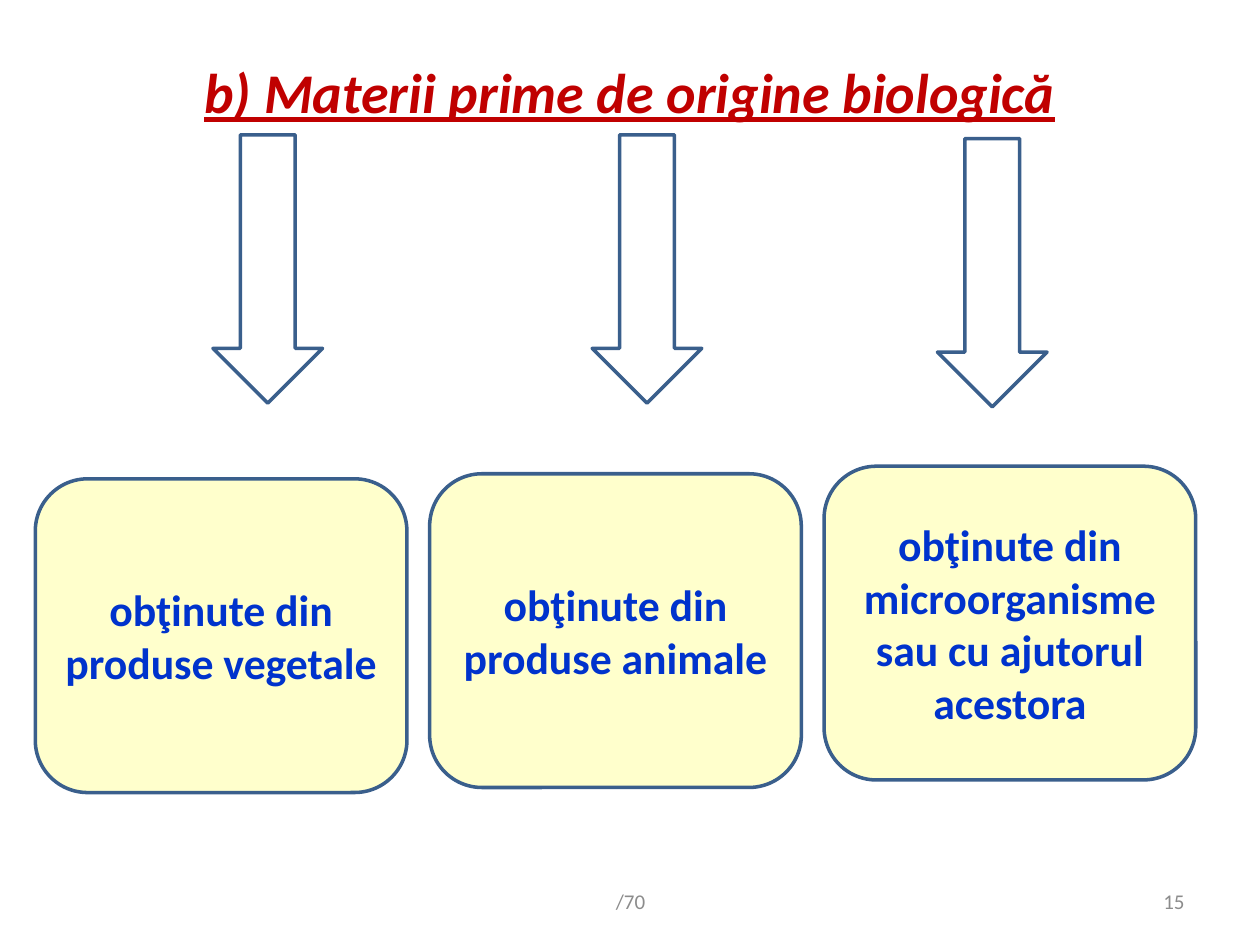
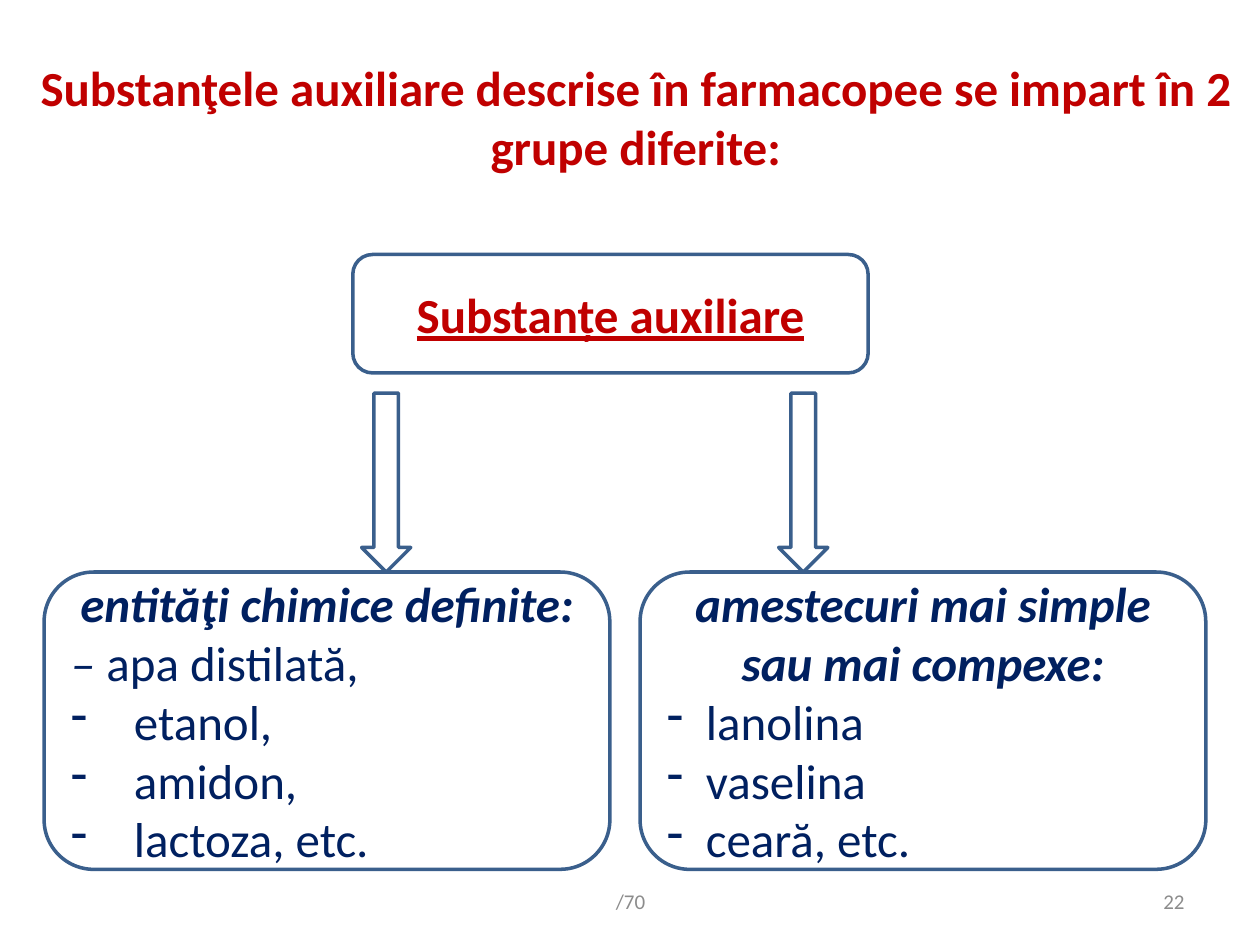
from dataclasses import dataclass, field

from lxml import etree
from pptx import Presentation
from pptx.dml.color import RGBColor
from pptx.enum.shapes import MSO_SHAPE
from pptx.enum.text import MSO_ANCHOR, MSO_AUTO_SIZE, PP_ALIGN
from pptx.oxml.ns import qn
from pptx.util import Inches, Pt

ROUND_RECT = MSO_SHAPE.ROUNDED_RECTANGLE
DOWN_ARROW = MSO_SHAPE.DOWN_ARROW
LEFT, CENTER, RIGHT = PP_ALIGN.LEFT, PP_ALIGN.CENTER, PP_ALIGN.RIGHT
MIDDLE = MSO_ANCHOR.MIDDLE
NO_AUTOFIT = MSO_AUTO_SIZE.NONE
TITLE_ONLY = 5


@dataclass(frozen=True)
class Theme:
    font: str = "Calibri"
    red: str = "C00000"
    blue: str = "0033CC"
    navy: str = "002060"
    grey: str = "8C8C8C"
    outline: str = "3A5F8C"
    white: str = "FFFFFF"
    cream: str = "FFFFCC"
    heading: int = 32
    large: int = 28
    label: int = 25
    small: int = 12
    line_width: int = 2


THEME = Theme()


@dataclass(frozen=True)
class Area:
    left: float
    top: float
    width: float
    height: float

    def lengths(self) -> tuple:
        return tuple(Inches(v) for v in (self.left, self.top, self.width, self.height))


@dataclass(frozen=True)
class Style:
    color: str
    size: int
    flags: dict = field(default_factory=dict)


@dataclass(frozen=True)
class Para:
    """A paragraph of (text, style) runs; a positive indent adds a dash bullet."""
    runs: tuple
    align: PP_ALIGN = CENTER
    indent: float = 0


@dataclass(frozen=True)
class Box:
    area: Area
    fill: str
    paras: tuple = ()
    shape: MSO_SHAPE = ROUND_RECT


TITLE = Style(THEME.red, THEME.large, {"bold": True})
HEADING = Style(THEME.red, THEME.heading, {"bold": True, "italic": True, "underline": True})
ROOT = Style(THEME.red, THEME.large, {"bold": True, "underline": True})
ORIGIN = Style(THEME.blue, THEME.label, {"bold": True})
GROUP = Style(THEME.navy, THEME.large, {"bold": True, "italic": True})
ITEM = Style(THEME.navy, THEME.large)
ITEM_DASH = Style(THEME.navy, THEME.large, {"italic": True})
FOOTER = Style(THEME.grey, THEME.small)

FOOTER_AREA = Area(3.42, 6.95, 3.17, 0.4)
NUMBER_AREA = Area(7.17, 6.95, 2.33, 0.4)


def line(text: str, style: Style, align: PP_ALIGN = CENTER) -> Para:
    return Para(((text, style),), align)


def dash_list(items: tuple, indent: float) -> tuple:
    return tuple(Para(((item, ITEM),), LEFT, indent) for item in items)


def add_dash(p, indent: float) -> None:
    pPr = p._p.get_or_add_pPr()
    pPr.set("marL", str(Inches(indent)))
    pPr.set("indent", str(-Inches(indent)))
    etree.SubElement(pPr, qn("a:buChar")).set("char", "-")


def write(tf, paras: tuple) -> None:
    for name, value in {"word_wrap": True, "auto_size": NO_AUTOFIT,
                        "vertical_anchor": MIDDLE}.items():
        setattr(tf, name, value)
    for i, para in enumerate(paras):
        p = tf.add_paragraph() if i else tf.paragraphs[0]
        p.alignment = para.align
        if para.indent:
            add_dash(p, para.indent)
        for text, style in para.runs:
            r = p.add_run()
            r.text = text
            font = {"name": THEME.font, "size": Pt(style.size),
                    "bold": False, "italic": False, **style.flags}
            for name, value in font.items():
                setattr(r.font, name, value)
            r.font.color.rgb = RGBColor.from_string(style.color)


def add_box(s, box: Box) -> None:
    sp = s.shapes.add_shape(box.shape, *box.area.lengths())
    sp.shadow.inherit = False
    sp.fill.solid()
    sp.fill.fore_color.rgb = RGBColor.from_string(box.fill)
    sp.line.color.rgb = RGBColor.from_string(THEME.outline)
    sp.line.width = Pt(THEME.line_width)
    write(sp.text_frame, box.paras)


def add_arrow(s, area: Area) -> None:
    add_box(s, Box(area, THEME.white, shape=DOWN_ARROW))


def add_text(s, area: Area, para: Para) -> None:
    write(s.shapes.add_textbox(*area.lengths()).text_frame, (para,))


def add_slide(prs, title: str, style: Style, area: Area, number: int):
    """Add a slide with its title, the shared footer and its page number."""
    s = prs.slides.add_slide(prs.slide_layouts[TITLE_ONLY])
    sp = s.shapes.title
    sp.left, sp.top, sp.width, sp.height = area.lengths()
    write(sp.text_frame, (line(title, style),))
    add_text(s, FOOTER_AREA, line("/70", FOOTER))
    add_text(s, NUMBER_AREA, line(str(number), FOOTER, RIGHT))
    return s


def biological_materials(prs) -> None:
    s = add_slide(prs, "b) Materii prime de origine biologică", HEADING,
                  Area(0.5, 0.3, 9, 0.85), 15)
    for left, top in ((1.69, 1.07), (4.7, 1.07), (7.44, 1.1)):
        add_arrow(s, Area(left, top, 0.87, 2.13))
    origins = (
        (3.8, "obţinute din produse vegetale"),
        (3.76, "obţinute din produse animale"),
        (3.7, "obţinute din microorganisme sau cu ajutorul acestora"),
    )
    for i, (top, text) in enumerate(origins):
        area = Area(0.28 + i * 3.13, top, 2.95, 2.49)
        add_box(s, Box(area, THEME.cream, (line(text, ORIGIN),)))


def auxiliary_substances(prs) -> None:
    s = add_slide(prs, "Substanţele auxiliare descrise în farmacopee se impart "
                  "în 2 grupe diferite:", TITLE, Area(0.2, 0.3, 9.69, 1.25), 22)
    add_box(s, Box(Area(2.8, 2.02, 4.09, 0.94), THEME.white,
                   (line("Substanțe auxiliare", ROOT),)))
    for left in (2.87, 6.18):
        add_arrow(s, Area(left, 3.12, 0.39, 1.42))
    entities = (
        line("entităţi chimice definite:", GROUP),
        Para((("– ", ITEM_DASH), ("apa distilată,", ITEM)), LEFT),
        *dash_list(("etanol,", "amidon,", "lactoza, etc."), 0.5),
    )
    mixtures = (
        line("amestecuri mai simple sau mai compexe:", GROUP),
        *dash_list(("lanolina", "vaselina", "ceară, etc."), 0.31),
    )
    for left, paras in ((0.35, entities), (5.08, mixtures)):
        add_box(s, Box(Area(left, 4.54, 4.49, 2.36), THEME.white, paras))


def main() -> None:
    prs = Presentation()
    prs.slide_width, prs.slide_height = Inches(10), Inches(7.5)
    biological_materials(prs)
    auxiliary_substances(prs)
    prs.save("out.pptx")


if __name__ == "__main__":
    main()
